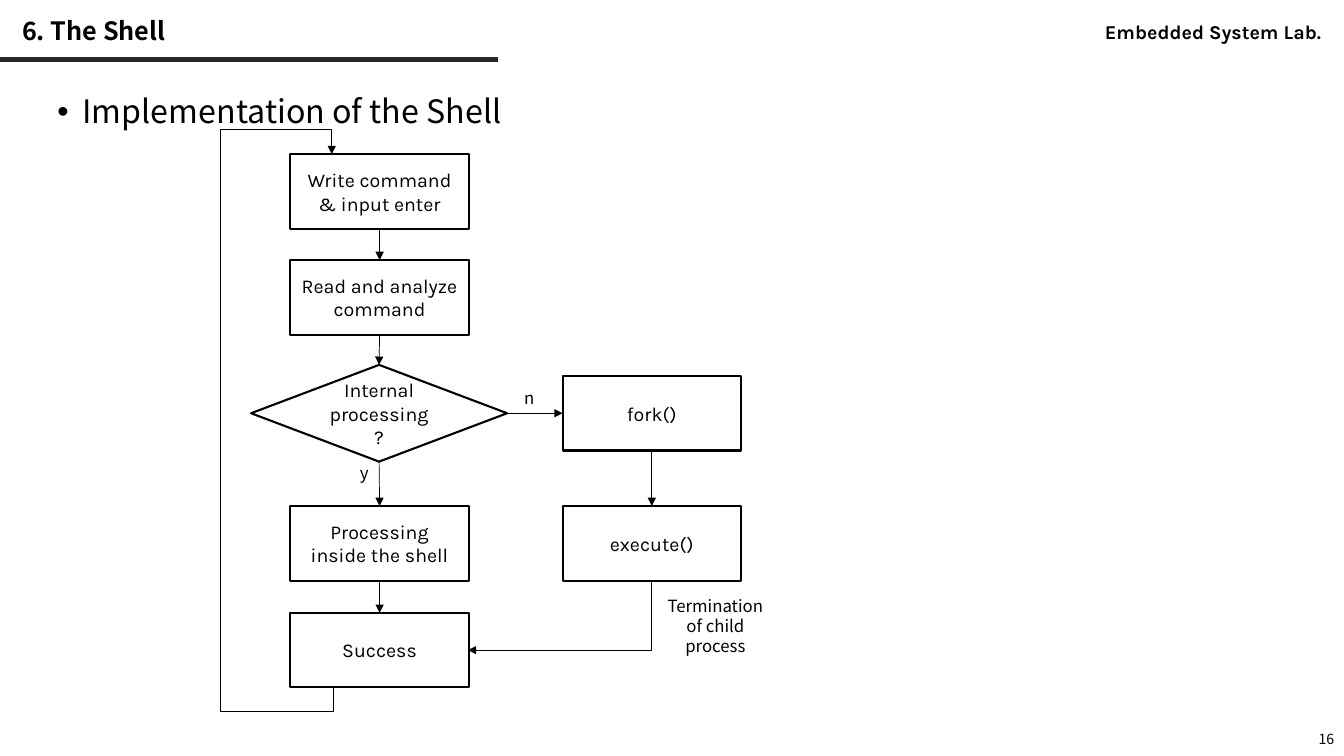
from lxml import etree
from pptx import Presentation
from pptx.dml.color import RGBColor
from pptx.enum.shapes import MSO_CONNECTOR, MSO_SHAPE
from pptx.enum.text import MSO_ANCHOR, MSO_AUTO_SIZE, PP_ALIGN
from pptx.oxml.ns import qn
from pptx.util import Pt

PX = 9144
COLORS = {"ink": "000000", "rule": "262626", "paper": "FFFFFF"}
KARLA, NOTO = "Karla", "Noto Sans CJK KR"
TOP, LEFT, BOTTOM, RIGHT = range(4)


def write(sp, lines, size, font, align=PP_ALIGN.LEFT, anchor=MSO_ANCHOR.TOP, bold=False):
    tf = sp.text_frame
    tf.word_wrap = True
    tf.vertical_anchor = anchor
    for i, line in enumerate(lines):
        p = tf.add_paragraph() if i else tf.paragraphs[0]
        p.alignment = align
        r = p.add_run()
        r.text = line
        r.font.size = Pt(size)
        r.font.name = font
        r.font.bold = bold
        r.font.color.rgb = RGBColor.from_string(COLORS["ink"])
    return tf


def stroke(sp, color, width, arrow=False):
    sp.line.color.rgb = RGBColor.from_string(COLORS[color])
    sp.line.width = Pt(width)
    if arrow:
        etree.SubElement(sp.line._get_or_add_ln(), qn("a:tailEnd"), type="triangle")
    if sp._element.spPr.find(qn("a:effectLst")) is None:
        etree.SubElement(sp._element.spPr, qn("a:effectLst"))


prs = Presentation()
prs.slide_width, prs.slide_height = 1333 * PX, 750 * PX
s = prs.slides.add_slide(prs.slide_layouts[6])
s.background.fill.solid()
s.background.fill.fore_color.rgb = RGBColor.from_string(COLORS["paper"])

rule = s.shapes.add_connector(MSO_CONNECTOR.STRAIGHT, 0, 59 * PX, 494 * PX, 59 * PX)
stroke(rule, "rule", 3)

lab = s.shapes.add_textbox(1086 * PX, 15 * PX, 249 * PX, 34 * PX)
tf = write(lab, ["Embedded System Lab."], 14, KARLA, bold=True)
tf.word_wrap = False
tf.auto_size = MSO_AUTO_SIZE.SHAPE_TO_FIT_TEXT

title = s.shapes.add_textbox(12 * PX, 12 * PX, 971 * PX, 40 * PX)
tf = write(title, ["6. The Shell"], 18, NOTO, anchor=MSO_ANCHOR.MIDDLE, bold=True)
tf.paragraphs[0].line_spacing = 0.9

number = s.shapes.add_textbox(1033 * PX, 717 * PX, 300 * PX, 32 * PX)
write(number, ["16"], 10, NOTO, PP_ALIGN.RIGHT, MSO_ANCHOR.MIDDLE)

body = s.shapes.add_textbox(47 * PX, 90 * PX, 1221 * PX, 570 * PX)
p = write(body, ["Implementation of the Shell"], 23, NOTO).paragraphs[0]
p.line_spacing = 0.9
pPr = p._p.get_or_add_pPr()
pPr.set("marL", str(25 * PX))
pPr.set("indent", str(-25 * PX))
etree.SubElement(pPr, qn("a:buFont"), typeface="Arial")
etree.SubElement(pPr, qn("a:buChar"), char="•")

RECT = (MSO_SHAPE.RECTANGLE, 177, 74)
DIAMOND = (MSO_SHAPE.DIAMOND, 254, 96)
MAIN, CHILD = 376, 646
steps = {
    "write": (RECT, MAIN, 153, ["Write command & input enter"]),
    "read": (RECT, MAIN, 258, ["Read and analyze command"]),
    "internal": (DIAMOND, MAIN, 362, ["Internal processing?"]),
    "fork": (RECT, CHILD, 373, ["fork()"]),
    "inside": (RECT, MAIN, 502, ["Processing", "inside the shell"]),
    "execute": (RECT, CHILD, 502, ["execute()"]),
    "success": (RECT, MAIN, 608, ["Success"]),
}
nodes = {}
for name, ((kind, w, h), cx, y, lines) in steps.items():
    sp = s.shapes.add_shape(kind, (cx - w // 2) * PX, y * PX, w * PX, h * PX)
    sp.shadow.inherit = False
    sp.fill.background()
    stroke(sp, "ink", 1.5)
    write(sp, lines, 14, KARLA, PP_ALIGN.CENTER, MSO_ANCHOR.MIDDLE)
    nodes[name] = sp

for start, out, end, into in [
    ("write", BOTTOM, "read", TOP),
    ("read", BOTTOM, "internal", TOP),
    ("internal", RIGHT, "fork", LEFT),
    ("fork", BOTTOM, "execute", TOP),
    ("internal", BOTTOM, "inside", TOP),
    ("inside", BOTTOM, "success", TOP),
]:
    arrow = s.shapes.add_connector(MSO_CONNECTOR.STRAIGHT, 0, 0, 0, 0)
    arrow.begin_connect(nodes[start], out)
    arrow.end_connect(nodes[end], into)
    stroke(arrow, "ink", 0.5, arrow=True)

child_return = [(646, 577), (646, 645), (464, 645)]
prompt_loop = [(331, 682), (331, 706), (219, 706), (219, 128), (329, 128), (329, 153)]
for route in (child_return, prompt_loop):
    fb = s.shapes.build_freeform(*route[0], scale=PX)
    fb.add_line_segments(route[1:], close=False)
    sp = fb.convert_to_shape()
    sp.shadow.inherit = False
    sp.fill.background()
    stroke(sp, "ink", 0.5, arrow=True)

for text, x, y, w, h, align in [
    ("y", 347, 454, 58, 30, PP_ALIGN.LEFT),
    ("n", 510, 380, 58, 30, PP_ALIGN.LEFT),
    ("Termination of child process", 644, 586, 131, 50, PP_ALIGN.CENTER),
]:
    label = s.shapes.add_textbox(x * PX, y * PX, w * PX, h * PX)
    tf = write(label, [text], 12, NOTO, align)
    tf.auto_size = MSO_AUTO_SIZE.SHAPE_TO_FIT_TEXT

prs.save("out.pptx")
